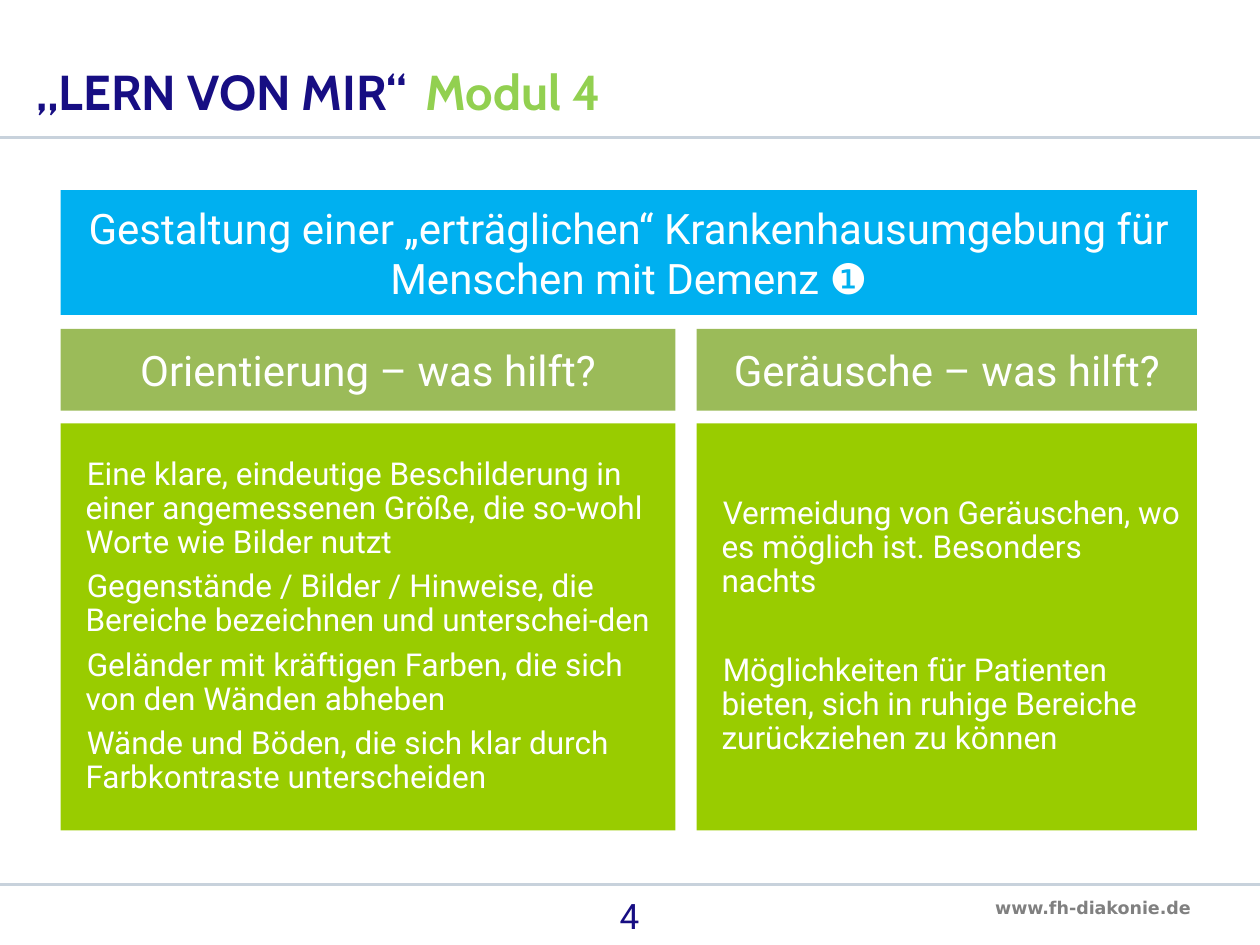
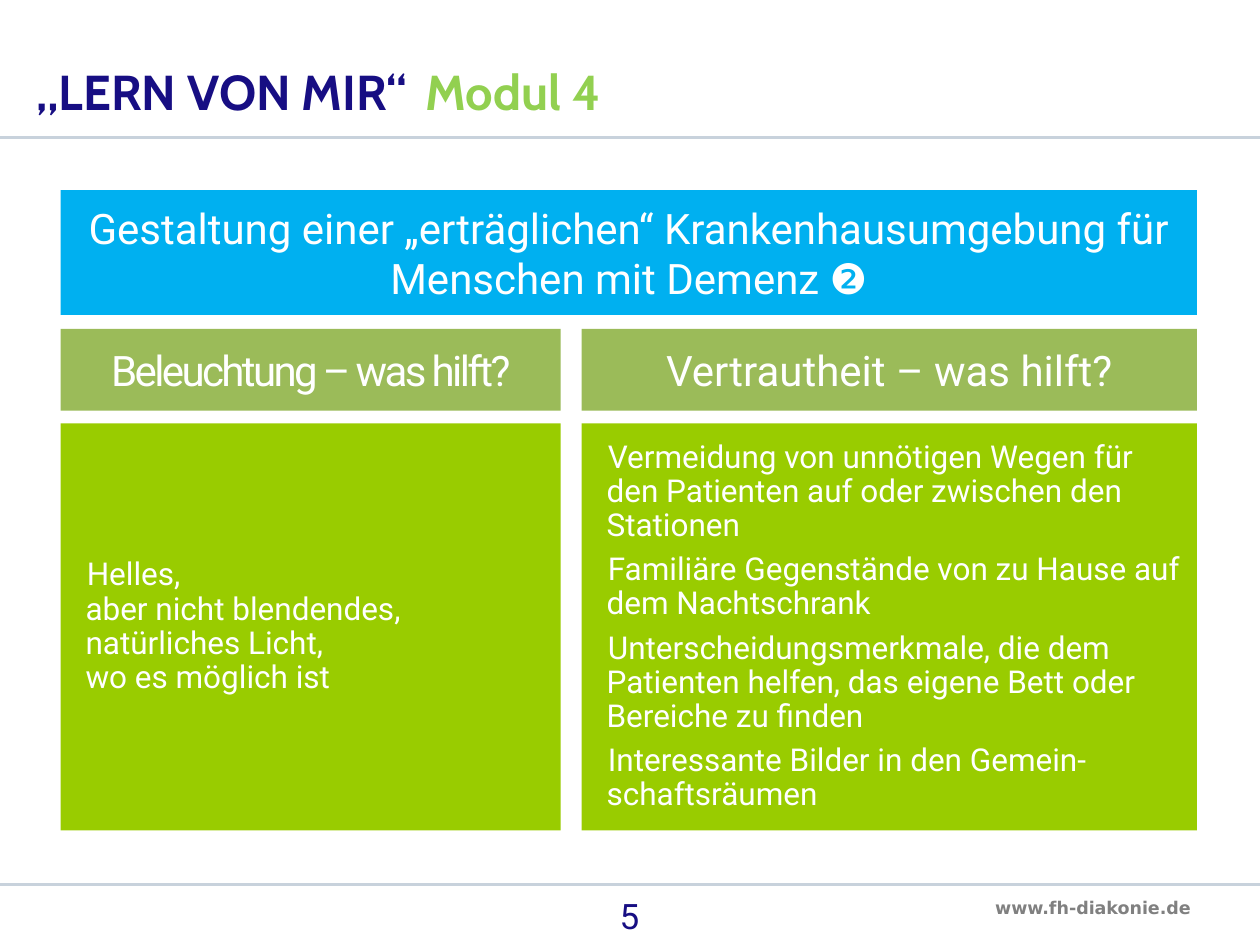
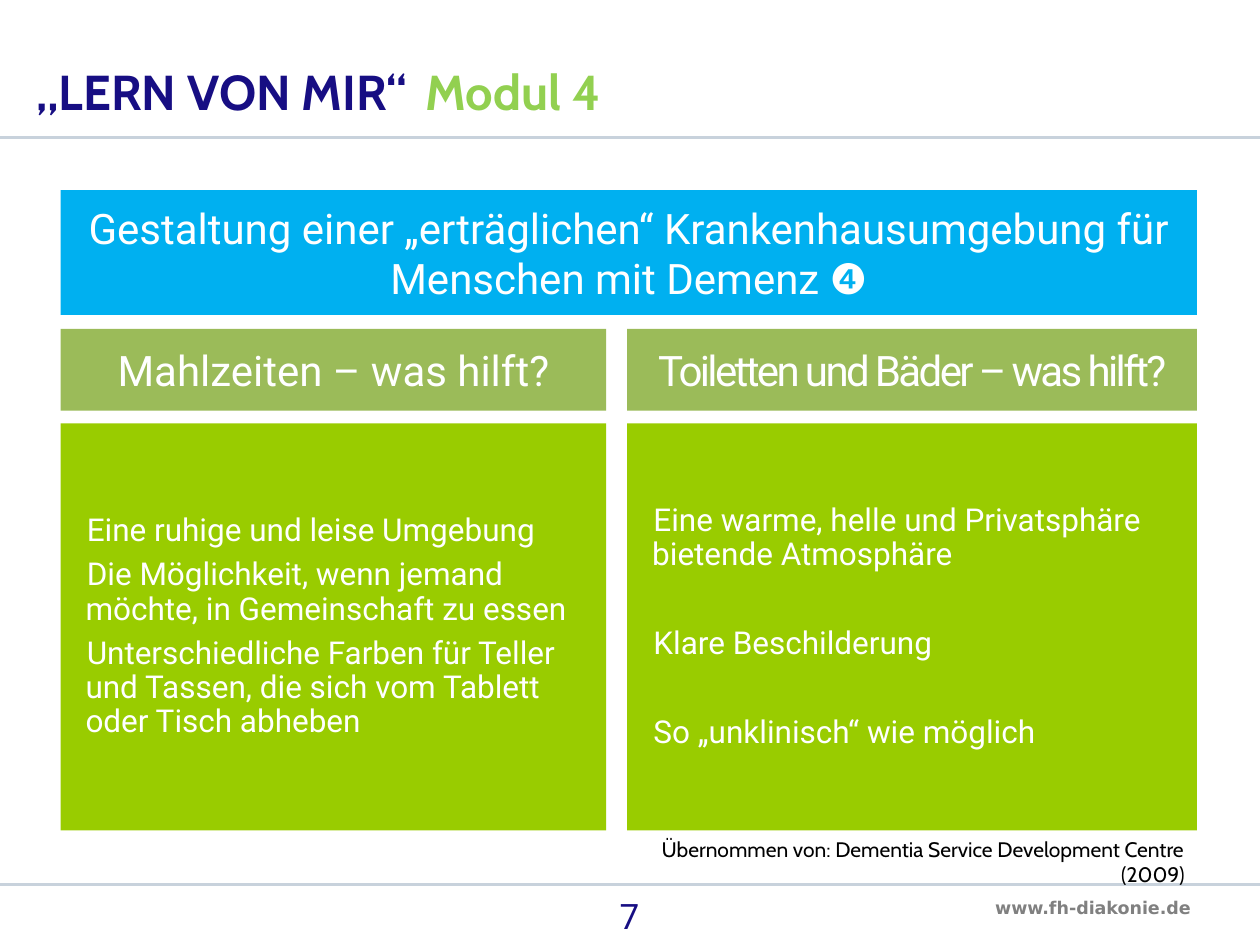
import pptx
import pptx.dml.color
import pptx.enum.shapes
import pptx.enum.text
import pptx.util
from lxml import etree
from pptx.oxml.ns import qn

Pt = pptx.util.Pt
ALIGN = pptx.enum.text.PP_ALIGN
ANCHOR = pptx.enum.text.MSO_ANCHOR
AUTO = pptx.enum.text.MSO_AUTO_SIZE

# Shared colours and fonts
NAVY, LIME, WHITE, BLACK, GREY = "170E83", "92D050", "FFFFFF", "000000", "808080"
RULE, BLUE, OLIVE, GREEN = "C8D2DC", "00B0F0", "9BBB59", "99CC00"
BODY_FONT, TITLE_FONT, SITE_FONT = "Roboto", "Cabin", "DejaVu Sans"

# Shared grid, in points
WIDTH, HEIGHT = 720, 540
LEFT, RIGHT, GUTTER = 34.6, 684, 12
TOPIC_TOP, TOPIC_H = 108.7, 71.3
HEAD_TOP, HEAD_H = 187.9, 46.8
BODY_TOP, BODY_H = 241.9, 232.6
WIDE, NARROW, MIDDLE = 351.4, 285.8, 311.8
TIGHT_GAP, LOOSE_GAP = 6, 31.4


def rgb(value):
    return pptx.dml.color.RGBColor.from_string(value)


class Deck:
    def __init__(self):
        self.prs = pptx.Presentation()
        self.prs.slide_width, self.prs.slide_height = Pt(WIDTH), Pt(HEIGHT)
        self.slide = None

    def font(self, target, size, color, name=BODY_FONT, bold=False):
        f = target.font
        f.size, f.name, f.bold = Pt(size), name, bold
        f.color.rgb = rgb(color)

    def text(self, x, y, w, h, text, size, color, name=BODY_FONT,
             bold=False, align=ALIGN.LEFT, wrap=True, grow=False):
        sp = self.slide.shapes.add_textbox(Pt(x), Pt(y), Pt(w), Pt(h))
        tf = sp.text_frame
        tf.word_wrap = wrap
        tf.auto_size = AUTO.SHAPE_TO_FIT_TEXT if grow else AUTO.NONE
        p = tf.paragraphs[0]
        p.text, p.alignment = text, align
        self.font(p, size, color, name, bold)

    def rule(self, y):
        line = self.slide.shapes.add_connector(
            pptx.enum.shapes.MSO_CONNECTOR.STRAIGHT, 0, Pt(y), Pt(WIDTH), Pt(y))
        line.line.color.rgb = rgb(RULE)
        line.line.width = Pt(1.5)
        etree.SubElement(line._element.spPr, qn("a:effectLst"))

    def panel(self, x, y, w, h, fill):
        sp = self.slide.shapes.add_shape(
            pptx.enum.shapes.MSO_SHAPE.RECTANGLE, Pt(x), Pt(y), Pt(w), Pt(h))
        sp.shadow.inherit = False
        sp.fill.solid()
        sp.fill.fore_color.rgb = rgb(fill)
        sp.line.fill.background()
        tf = sp.text_frame
        tf.word_wrap = True
        tf.vertical_anchor = ANCHOR.MIDDLE
        return tf

    def heading(self, x, y, w, h, fill, text, spacing=0):
        p = self.panel(x, y, w, h, fill).paragraphs[0]
        p.text, p.alignment = text, ALIGN.CENTER
        self.font(p, 24, WHITE)
        if spacing:
            p.runs[0]._r.get_or_add_rPr().set("spc", str(int(spacing * 100)))

    def points(self, x, w, items, gap):
        tf = self.panel(x, BODY_TOP, w, BODY_H, GREEN)
        for i, item in enumerate(items):
            p = tf.add_paragraph() if i else tf.paragraphs[0]
            p.text, p.alignment = item, ALIGN.LEFT
            p.line_spacing = 0.9
            p.space_after = Pt(gap if i < len(items) - 1 else TIGHT_GAP)
            pPr = p._p.get_or_add_pPr()
            pPr.set("marL", str(Pt(7.2)))
            pPr.set("indent", str(Pt(0.72)))
            self.font(p, 18, WHITE)

    def column(self, x, w, head, items, gap=TIGHT_GAP, spacing=0):
        self.heading(x, HEAD_TOP, w, HEAD_H, OLIVE, head, spacing)
        self.points(x, w, items, gap)

    def title(self):
        sp = self.slide.shapes.add_textbox(Pt(13.7), Pt(31), Pt(480), Pt(41.8))
        tf = sp.text_frame
        tf.word_wrap = True
        tf.vertical_anchor = ANCHOR.BOTTOM
        p = tf.paragraphs[0]
        p.line_spacing = 0.9
        # The module name starts at a tab stop
        tabs = etree.SubElement(p._p.get_or_add_pPr(), qn("a:tabLst"))
        etree.SubElement(tabs, qn("a:tab"), pos=str(Pt(222.5)), algn="l")
        for text, color in (("„LERN VON MIR“\t", NAVY), ("Modul 4", LIME)):
            r = p.add_run()
            r.text = text
            self.font(r, 28, color, TITLE_FONT, True)

    def add_slide(self, number, mark, left_width, left, right):
        self.slide = self.prs.slides.add_slide(self.prs.slide_layouts[6])
        # Frame: rules, site address, page number, title
        self.text(561.6, 509, 128.2, 19.4, "www.fh-diakonie.de", 10, GREY,
                  SITE_FONT, True, wrap=False, grow=True)
        self.rule(78.5)
        self.rule(505.4)
        self.text(275.8, 507.6, 167.8, 32.4, number, 20, NAVY, align=ALIGN.CENTER)
        self.title()
        # Topic band and the two columns
        self.heading(LEFT, TOPIC_TOP, RIGHT - LEFT, TOPIC_H, BLUE,
                     "Gestaltung einer „erträglichen“ Krankenhausumgebung für "
                     f"Menschen mit Demenz {mark}")
        x = LEFT + left_width + GUTTER
        self.column(LEFT, left_width, **left)
        self.column(x, RIGHT - x, **right)


def main():
    deck = Deck()

    # Orientation and noise
    deck.add_slide(
        "4", "❶", WIDE,
        dict(head="Orientierung – was hilft?", items=[
            "Eine klare, eindeutige Beschilderung in einer angemessenen Größe, "
            "die so-wohl Worte wie Bilder nutzt",
            "Gegenstände / Bilder / Hinweise, die Bereiche bezeichnen und "
            "unterschei-den",
            "Geländer mit kräftigen Farben, die sich von den Wänden abheben",
            "Wände und Böden, die sich klar durch Farbkontraste unterscheiden"]),
        dict(head="Geräusche – was hilft?", gap=LOOSE_GAP, items=[
            "Vermeidung von Geräuschen, wo es möglich ist. Besonders nachts",
            "Möglichkeiten für Patienten bieten, sich in ruhige Bereiche "
            "zurückziehen zu können"]))

    # Lighting and familiarity
    deck.add_slide(
        "5", "❷", NARROW,
        dict(head="Beleuchtung – was hilft?", spacing=-1.5, items=[
            "Helles,\vaber nicht blendendes, natürliches Licht,\v"
            "wo es möglich ist"]),
        dict(head="Vertrautheit – was hilft?", items=[
            "Vermeidung von unnötigen Wegen für den Patienten auf oder "
            "zwischen den Stationen",
            "Familiäre Gegenstände von zu Hause auf dem Nachtschrank",
            "Unterscheidungsmerkmale, die dem Patienten helfen, das eigene "
            "Bett oder Bereiche zu finden",
            "Interessante Bilder in den Gemein-schaftsräumen"]))

    # Meals and bathrooms, with the source line
    deck.add_slide(
        "7", "❹", MIDDLE,
        dict(head="Mahlzeiten – was hilft?", items=[
            "Eine ruhige und leise Umgebung",
            "Die Möglichkeit, wenn jemand möchte, in Gemeinschaft zu essen",
            "Unterschiedliche Farben für Teller und Tassen, die sich vom "
            "Tablett oder Tisch abheben"]),
        dict(head="Toiletten und Bäder – was hilft?", gap=LOOSE_GAP,
             spacing=-1.5, items=[
                 "Eine warme, helle und Privatsphäre bietende Atmosphäre",
                 "Klare Beschilderung",
                 "So „unklinisch“ wie möglich"]))
    x = LEFT + MIDDLE + GUTTER
    deck.text(x, BODY_TOP + BODY_H, RIGHT - x, 36,
              "Übernommen von: Dementia Service Development Centre (2009)",
              12, BLACK, TITLE_FONT, align=ALIGN.RIGHT, grow=True)

    deck.prs.save("out.pptx")


if __name__ == "__main__":
    main()
